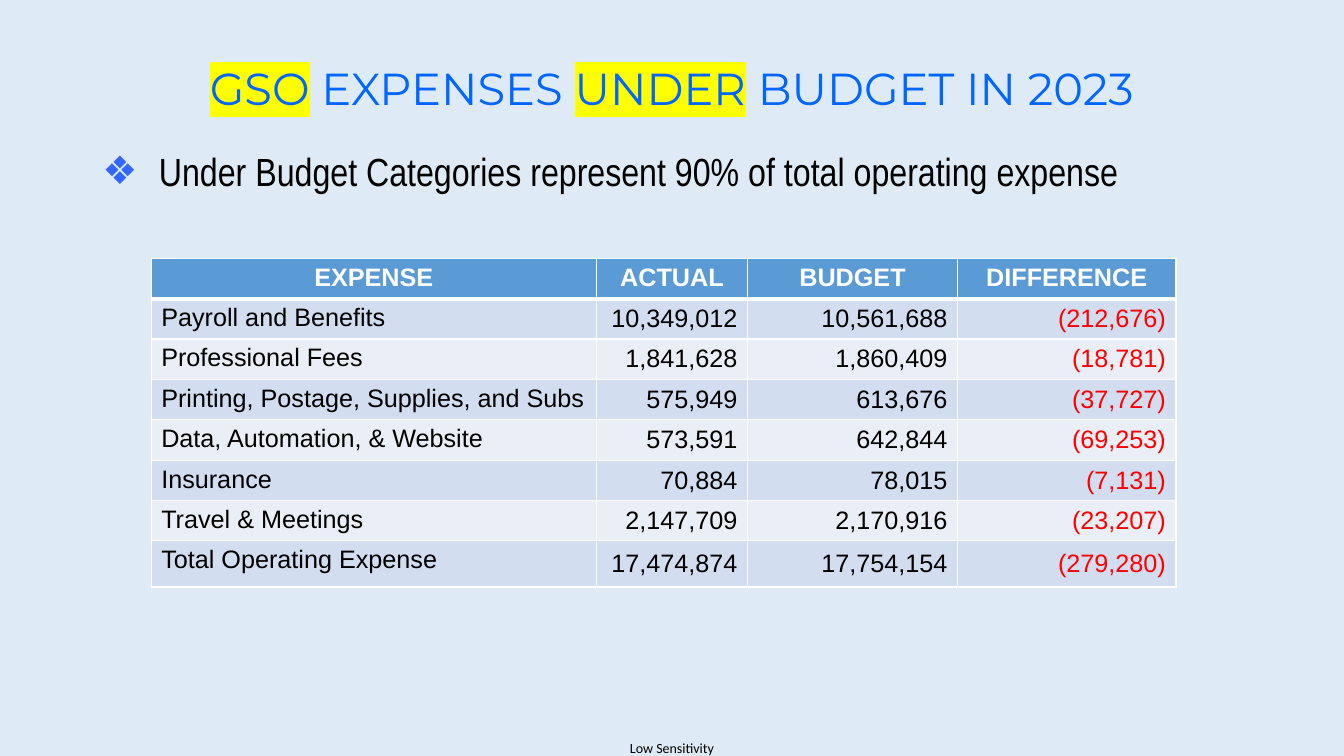
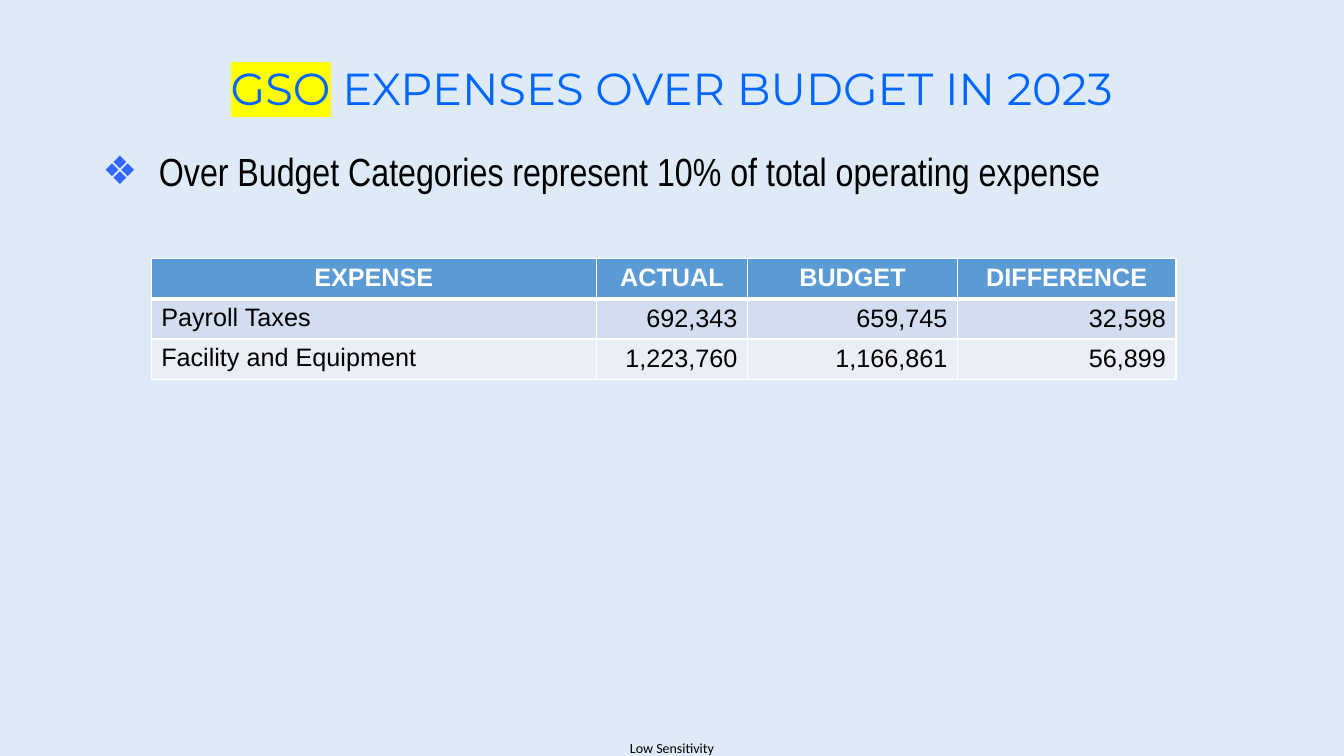
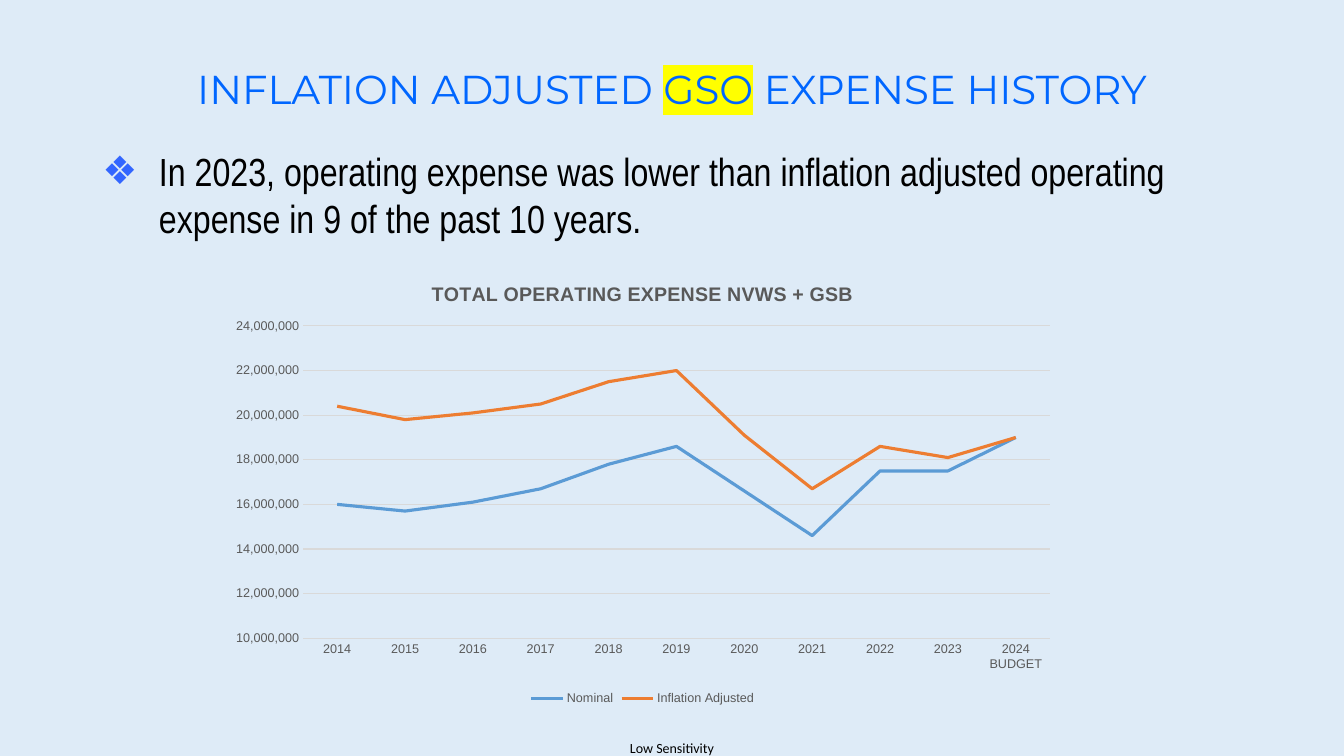
from lxml.etree import SubElement
from pptx import Presentation
from pptx.chart.data import CategoryChartData
from pptx.dml.color import RGBColor
from pptx.enum.chart import XL_CHART_TYPE as ChartType, XL_LEGEND_POSITION as LegendPos
from pptx.enum.chart import XL_TICK_MARK as TickMark
from pptx.enum.text import MSO_ANCHOR as Anchor, PP_ALIGN as Align
from pptx.oxml import parse_xml
from pptx.oxml.ns import nsdecls, qn
from pptx.util import Pt

# Shared look
PX = 9525
SKY, WHITE, BLACK, RED = "DEEBF7", "FFFFFF", "000000", "FF0000"
TITLE_BLUE, BULLET_BLUE, YELLOW = "0066FF", "3366FF", "FFFF00"
HEADER_BLUE, BANDS = "5B9BD5", ("D2DEEF", "EAEFF7")
GREY, GRID_GREY, ORANGE = "595959", "D9D9D9", "ED7D31"

# Expense tables
HEADINGS = ("EXPENSE", "ACTUAL", "BUDGET", "DIFFERENCE")
COLUMN_WIDTHS = (424, 144, 200, 208)
ROW_HEIGHT, TOTAL_HEIGHT = 37, 44
UNDER_BUDGET = (
    ("Payroll and Benefits", "10,349,012", "10,561,688", "(212,676)"),
    ("Professional Fees", "1,841,628", "1,860,409", "(18,781)"),
    ("Printing, Postage, Supplies, and Subs", "575,949", "613,676", "(37,727)"),
    ("Data, Automation, & Website", "573,591", "642,844", "(69,253)"),
    ("Insurance", "70,884", "78,015", "(7,131)"),
    ("Travel & Meetings", "2,147,709", "2,170,916", "(23,207)"),
    ("Total Operating Expense", "17,474,874", "17,754,154", "(279,280)"),
)
OVER_BUDGET = (
    ("Payroll Taxes", "692,343", "659,745", "32,598"),
    ("Facility and Equipment", "1,223,760", "1,166,861", "56,899"),
)

# Expense history, in millions
YEARS = [str(year) for year in range(2014, 2024)] + ["2024 BUDGET"]
HISTORY = (
    ("Nominal", HEADER_BLUE,
     (16, 15.7, 16.1, 16.7, 17.8, 18.6, 16.6, 14.6, 17.5, 17.5, 19)),
    ("Inflation Adjusted", ORANGE,
     (20.4, 19.8, 20.1, 20.5, 21.5, 22, 19.1, 16.7, 18.6, 18.1, 19)),
)
MILLION = 1_000_000


def px(*lengths):
    return [length * PX for length in lengths]


def rgb(value):
    return RGBColor.from_string(value)


def style_font(font, size, color, name="Arial", bold=False):
    font.size, font.bold, font.name = Pt(size), bold, name
    font.color.rgb = rgb(color)


def add_run(paragraph, text, size, color, name="Arial", bold=False, highlight=None):
    run = paragraph.add_run()
    run.text = text
    style_font(run.font, size, color, name, bold)
    if highlight:
        mark = parse_xml(f'<a:highlight {nsdecls("a")}><a:srgbClr val="{highlight}"/></a:highlight>')
        run.font.fill  # the highlight follows the text fill
        run._r.rPr.find(qn("a:solidFill")).addnext(mark)


def add_text_frame(slide, box, wrap=True):
    frame = slide.shapes.add_textbox(*px(*box)).text_frame
    frame.word_wrap = wrap
    return frame


def add_title(slide, parts, size):
    """Parts alternate between plain and highlighted text, plain first."""
    frame = add_text_frame(slide, (88, 38, 1104, 98))
    frame.vertical_anchor = Anchor.MIDDLE
    heading = frame.paragraphs[0]
    heading.alignment, heading.line_spacing = Align.CENTER, 0.9
    for index, part in enumerate(parts):
        if part:
            add_run(heading, part, size, TITLE_BLUE, "Montserrat",
                    highlight=YELLOW if index % 2 else None)


def add_bullet(slide, text):
    point = add_text_frame(slide, (88, 136, 1104, 528)).paragraphs[0]
    point.space_after = Pt(24)
    props = point._p.get_or_add_pPr()
    indent = 54 * PX
    props.set("marL", str(indent))
    props.set("indent", str(-indent))
    SubElement(SubElement(props, qn("a:buClr")), qn("a:srgbClr"), val=BULLET_BLUE)
    SubElement(props, qn("a:buFont"), typeface="Arial")
    SubElement(props, qn("a:buChar"), char="❖")
    add_run(point, text, 28, BLACK, "Arial Narrow")


def add_footer(slide):
    frame = add_text_frame(slide, (600, 704, 84, 16), wrap=False)
    frame.margin_left = frame.margin_right = frame.margin_top = frame.margin_bottom = 0
    add_run(frame.paragraphs[0], "Low Sensitivity", 10, BLACK, "Calibri")


def add_slide(prs, title, bullet, title_size=32):
    slide = prs.slides.add_slide(prs.slide_layouts[6])
    add_footer(slide)
    add_title(slide, title, title_size)
    add_bullet(slide, bullet)
    return slide


def set_borders(cell, top, bottom):
    props = cell._tc.get_or_add_tcPr()
    for side, width in (("L", 1), ("R", 1), ("T", top), ("B", bottom)):
        line = SubElement(props, qn(f"a:ln{side}"), w=str(Pt(width)))
        SubElement(SubElement(line, qn("a:solidFill")), qn("a:srgbClr"), val=WHITE)


def fill_cell(cell, text, row, column):
    header = row == 0
    set_borders(cell, top=3 if row == 1 else 1, bottom=3 if header else 1)
    cell.fill.solid()
    cell.fill.fore_color.rgb = rgb(HEADER_BLUE if header else BANDS[(row - 1) % 2])
    paragraph = cell.text_frame.paragraphs[0]
    color = RED if text.startswith("(") else BLACK
    if header:
        paragraph.alignment, color = Align.CENTER, WHITE
    elif column:
        paragraph.alignment, cell.vertical_anchor = Align.RIGHT, Anchor.MIDDLE
    add_run(paragraph, text, 18, color, bold=header)


def add_expense_table(slide, expenses):
    rows = (HEADINGS, *expenses)
    heights = [TOTAL_HEIGHT if row[0].startswith("Total") else ROW_HEIGHT for row in rows]
    box = px(144, 246, sum(COLUMN_WIDTHS), sum(heights))
    table = slide.shapes.add_table(len(rows), len(HEADINGS), *box).table
    for column, width in zip(table.columns, px(*COLUMN_WIDTHS)):
        column.width = width
    for r, (row, height) in enumerate(zip(rows, px(*heights))):
        table.rows[r].height = height
        for c, text in enumerate(row):
            fill_cell(table.cell(r, c), text, r, c)


def style_line(line, color, width):
    line.color.rgb = rgb(color)
    line.width = Pt(width)


def place_plot(chart, **fractions):
    """Fix the inner plot area as fractions of the chart."""
    area = chart._chartSpace.chart.plotArea
    for old in area.findall(qn("c:layout")):
        area.remove(old)
    layout = parse_xml(f'<c:layout {nsdecls("c")}/>')
    manual = SubElement(layout, qn("c:manualLayout"))
    SubElement(manual, qn("c:layoutTarget"), val="inner")
    for mode in ("xMode", "yMode"):
        SubElement(manual, qn(f"c:{mode}"), val="edge")
    for key, fraction in fractions.items():
        SubElement(manual, qn(f"c:{key}"), val=str(fraction))
    area.insert(0, layout)


def add_history_chart(slide):
    history = CategoryChartData(number_format="#,##0")
    history.categories = YEARS
    for name, _, millions in HISTORY:
        history.add_series(name, [round(value * MILLION) for value in millions])
    chart = slide.shapes.add_chart(ChartType.LINE, *px(208, 251, 808, 425), history).chart
    style_font(chart.font, 10, BLACK)
    place_plot(chart, x=0.1, y=0.14, w=0.88, h=0.7)

    # Title and legend
    chart.has_title = True
    add_run(chart.chart_title.text_frame.paragraphs[0],
            "TOTAL OPERATING EXPENSE NVWS + GSB", 14, GREY, bold=True)
    chart.chart_title.include_in_layout = False
    chart.has_legend = True
    chart.legend.position = LegendPos.BOTTOM
    chart.legend.include_in_layout = False
    style_font(chart.legend.font, 9, GREY)

    # Axes
    years, amounts = chart.category_axis, chart.value_axis
    for axis in (years, amounts):
        axis.major_tick_mark = axis.minor_tick_mark = TickMark.NONE
        style_font(axis.tick_labels.font, 9, GREY)
    style_line(years.format.line, GRID_GREY, 0.75)
    amounts.format.line.fill.background()
    amounts.minimum_scale, amounts.maximum_scale = 10 * MILLION, 24 * MILLION
    amounts.major_unit = 2 * MILLION
    amounts.tick_labels.number_format = "#,##0"
    amounts.tick_labels.number_format_is_linked = False
    style_line(amounts.major_gridlines.format.line, GRID_GREY, 0.75)

    # Series
    plot = chart.plots[0]
    plot.vary_by_categories = False
    for series, (_, color, _) in zip(plot.series, HISTORY):
        series.smooth = False
        style_line(series.format.line, color, 2.25)


def main():
    prs = Presentation()
    prs.slide_width, prs.slide_height = px(1280, 720)
    backdrop = prs.slide_master.background.fill
    backdrop.solid()
    backdrop.fore_color.rgb = rgb(SKY)

    under = add_slide(prs, ("", "GSO", " EXPENSES ", "UNDER", " BUDGET IN 2023"),
                      "Under Budget Categories represent 90% of total operating expense")
    add_expense_table(under, UNDER_BUDGET)

    over = add_slide(prs, ("", "GSO", " EXPENSES OVER BUDGET IN 2023"),
                     "Over Budget Categories represent 10% of total operating expense")
    add_expense_table(over, OVER_BUDGET)

    inflation = add_slide(prs, ("INFLATION ADJUSTED ", "GSO", " EXPENSE HISTORY"),
                          "In 2023, operating expense was lower than inflation adjusted "
                          "operating expense in 9 of the past 10 years.", title_size=28.8)
    add_history_chart(inflation)
    prs.save("out.pptx")


if __name__ == "__main__":
    main()
